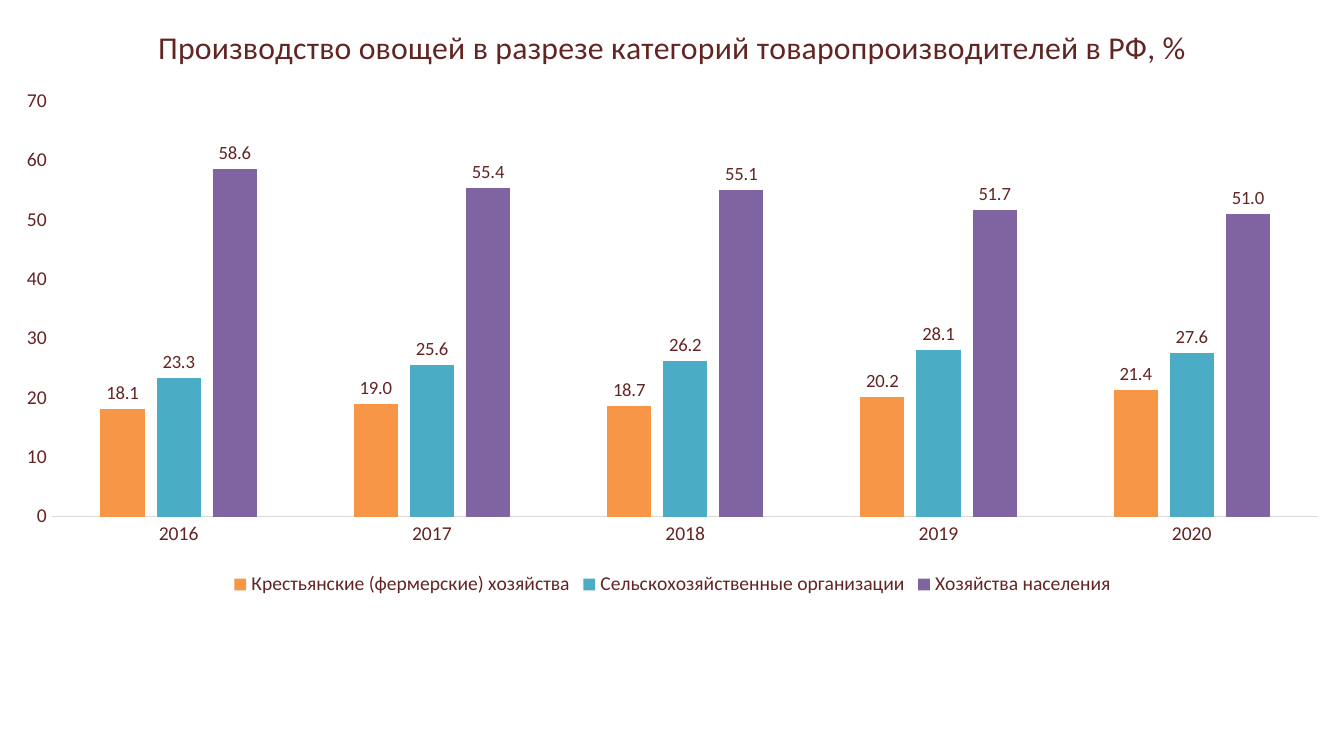
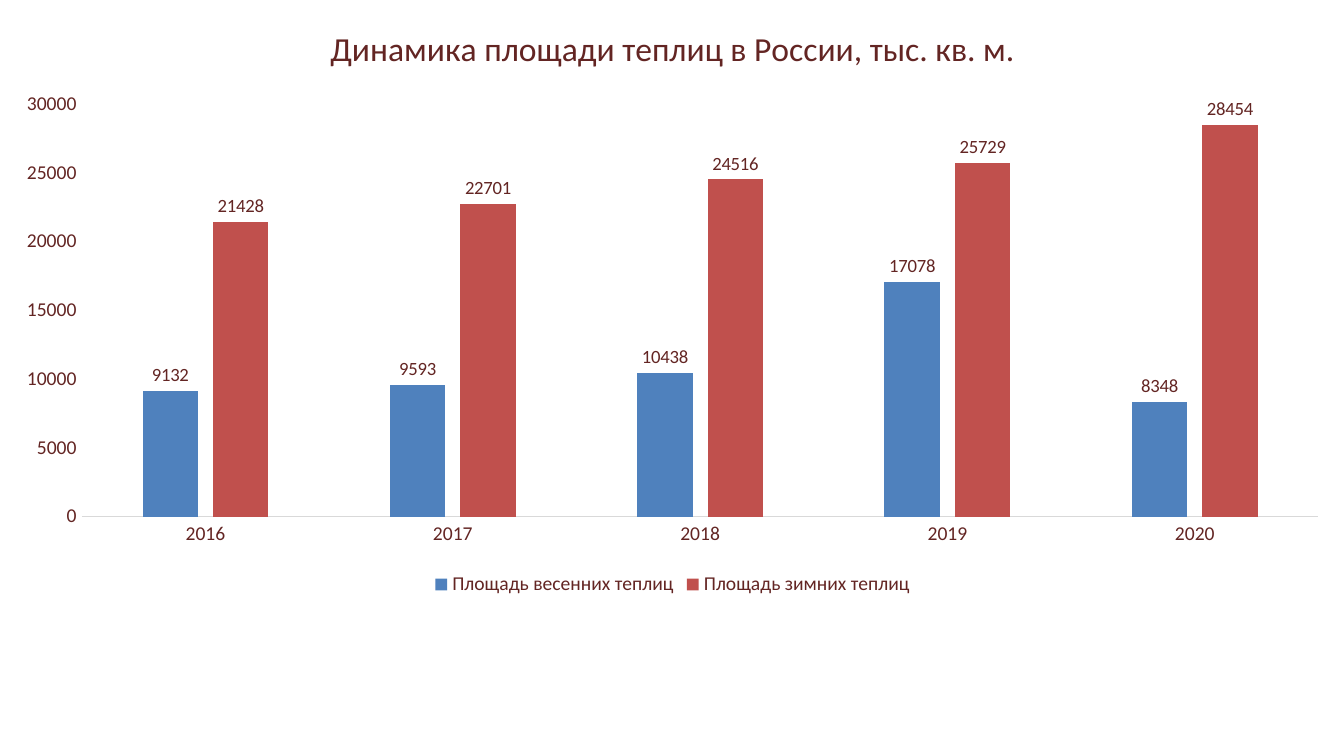
from typing import NamedTuple

from pptx import Presentation, util as u
from pptx.chart.chart import Chart
from pptx.chart.data import CategoryChartData
from pptx.dml.color import RGBColor
from pptx.enum import chart as ch
from pptx.text.text import Font, TextFrame

FONT = "Calibri"
MAROON = RGBColor(0x63, 0x25, 0x23)
WHITE = RGBColor(0xFF, 0xFF, 0xFF)
AXIS_GREY = RGBColor(0xD9, 0xD9, 0xD9)
ORANGE = RGBColor(0xF7, 0x96, 0x46)
TEAL = RGBColor(0x4B, 0xAC, 0xC6)
PURPLE = RGBColor(0x80, 0x64, 0xA2)
BLUE = RGBColor(0x4F, 0x81, 0xBD)
RED = RGBColor(0xC0, 0x50, 0x4D)

EMU_PER_PX = 9525
SLIDE_W, SLIDE_H = 960, 540
CHART_W, CHART_H = 961, 430
AXIS_SIZE = 10.5
LABEL_SIZE = 10
YEARS = [str(year) for year in range(2016, 2021)]


class Series(NamedTuple):
    name: str
    color: RGBColor
    values: tuple[float, ...]


class ChartSlide(NamedTuple):
    title: str
    title_size: float
    axis_format: str
    label_format: str
    series: tuple[Series, ...]


CHART_SLIDES = (
    ChartSlide(
        "Производство овощей в разрезе категорий товаропроизводителей в РФ, %",
        17, "General", "0.0",
        (
            Series("Крестьянские (фермерские) хозяйства", ORANGE, (18.1, 19.0, 18.7, 20.2, 21.4)),
            Series("Сельскохозяйственные организации", TEAL, (23.3, 25.6, 26.2, 28.1, 27.6)),
            Series("Хозяйства населения", PURPLE, (58.6, 55.4, 55.1, 51.7, 51.0)),
        ),
    ),
    ChartSlide(
        "Динамика площади теплиц в России, тыс. кв. м.",
        18, "0", "0",
        (
            Series("Площадь весенних теплиц", BLUE, (9132, 9593, 10438, 17078, 8348)),
            Series("Площадь зимних теплиц", RED, (21428, 22701, 24516, 25729, 28454)),
        ),
    ),
)


def px(length: int) -> u.Emu:
    return u.Emu(length * EMU_PER_PX)


def format_font(font: Font, *, size: float, color: RGBColor = MAROON) -> None:
    font.name = FONT
    font.size = u.Pt(size)
    font.bold = False
    font.color.rgb = color


def write_text(frame: TextFrame, content: str, *, size: float, color: RGBColor = MAROON) -> None:
    run = frame.paragraphs[0].add_run()
    run.text = content
    format_font(run.font, size=size, color=color)


def format_axes(chart: Chart, value_format: str) -> None:
    years, values = chart.category_axis, chart.value_axis
    for axis in (years, values):
        axis.major_tick_mark = axis.minor_tick_mark = ch.XL_TICK_MARK.NONE
        format_font(axis.tick_labels.font, size=AXIS_SIZE)
    years.format.line.color.rgb = AXIS_GREY
    years.format.line.width = u.Pt(0.75)
    values.format.line.fill.background()
    values.has_major_gridlines = True
    gridlines = values.major_gridlines.format.line
    gridlines.color.rgb = WHITE
    gridlines.width = u.Pt(0.75)
    values.tick_labels.number_format = value_format
    values.tick_labels.number_format_is_linked = False


def format_columns(chart: Chart, content: ChartSlide) -> None:
    plot = chart.plots[0]
    plot.vary_by_categories = False
    plot.gap_width = 219
    plot.overlap = -27
    for columns, series in zip(plot.series, content.series):
        columns.invert_if_negative = False
        columns.format.fill.solid()
        columns.format.fill.fore_color.rgb = series.color
        labels = columns.data_labels
        labels.show_value = True
        labels.position = ch.XL_LABEL_POSITION.OUTSIDE_END
        labels.number_format = content.label_format
        labels.number_format_is_linked = False
        format_font(labels.font, size=LABEL_SIZE)


def add_chart_slide(deck: Presentation, content: ChartSlide) -> None:
    slide = deck.slides.add_slide(deck.slide_layouts.get_by_name("Blank"))
    data = CategoryChartData(number_format=content.label_format)
    data.categories = YEARS
    for series in content.series:
        data.add_series(series.name, series.values)
    chart = slide.shapes.add_chart(
        ch.XL_CHART_TYPE.COLUMN_CLUSTERED, 0, 0, px(CHART_W), px(CHART_H), data
    ).chart
    chart.font.name = FONT
    chart.font.size = u.Pt(LABEL_SIZE)
    chart.has_title = True
    chart.chart_title.include_in_layout = False
    write_text(chart.chart_title.text_frame, content.title, size=content.title_size)
    chart.has_legend = True
    chart.legend.position = ch.XL_LEGEND_POSITION.BOTTOM
    chart.legend.include_in_layout = False
    format_font(chart.legend.font, size=AXIS_SIZE)
    format_axes(chart, content.axis_format)
    format_columns(chart, content)


def main() -> None:
    deck = Presentation()
    deck.slide_width, deck.slide_height = px(SLIDE_W), px(SLIDE_H)
    for content in CHART_SLIDES:
        add_chart_slide(deck, content)
    deck.save("out.pptx")


if __name__ == "__main__":
    main()
